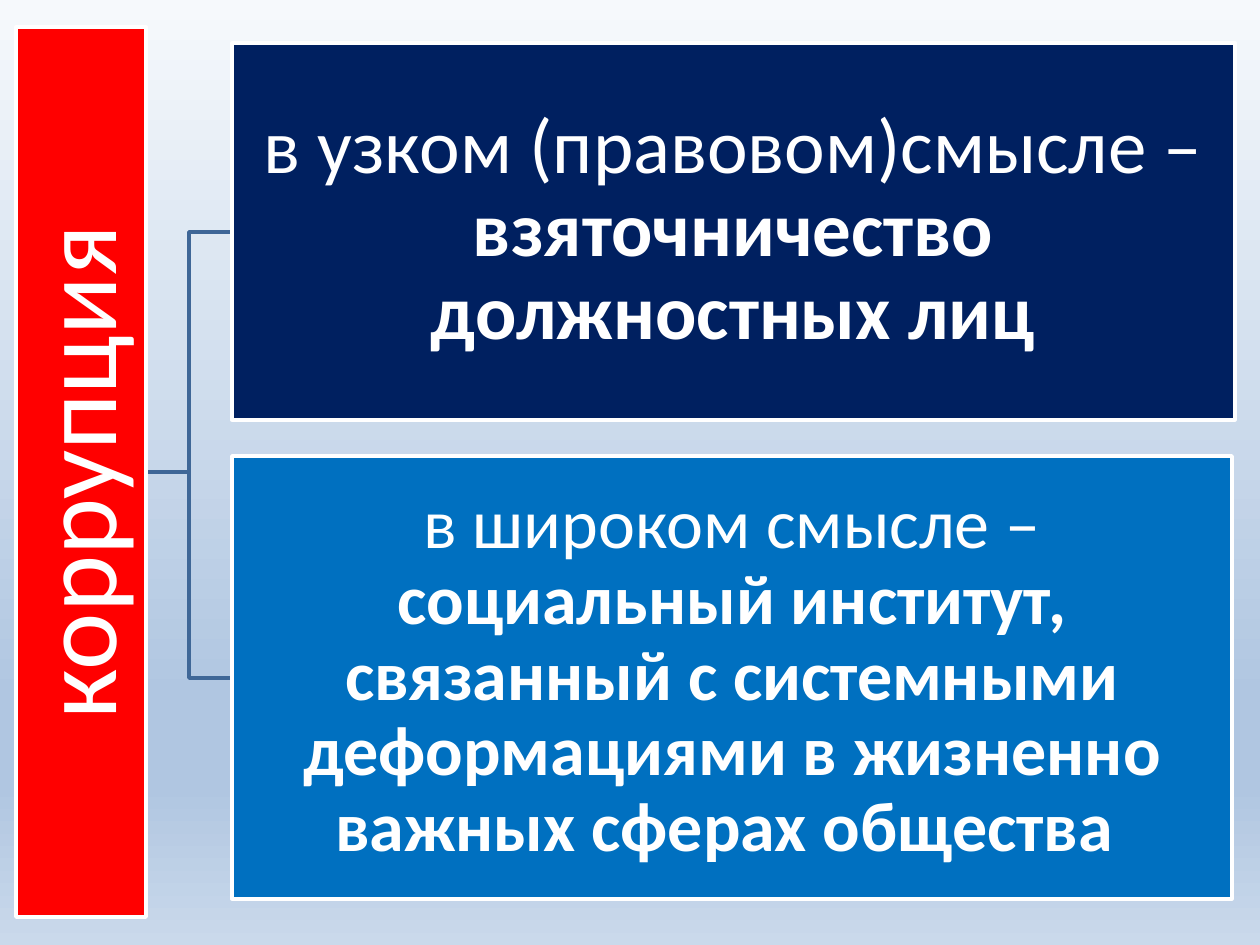
from copy import deepcopy

from pptx import Presentation
from pptx.dml.color import RGBColor
from pptx.enum.shapes import MSO_SHAPE
from pptx.enum.text import MSO_ANCHOR, PP_ALIGN
from pptx.oxml.ns import qn
from pptx.util import Emu, Pt

RECTANGLE = MSO_SHAPE.RECTANGLE
MIDDLE = MSO_ANCHOR.MIDDLE
CENTER = PP_ALIGN.CENTER

PX = 914400 / 126
FONT = "Calibri"
WHITE, RED, NAVY, BLUE, STEEL = "FFFFFF", "FF0000", "002060", "0070C0", "3F6797"
BACKGROUND_STOPS = [(0, "F6F9FC"), (0.74, "B0C6E1"), (0.83, "B0C6E1"), (1, "CAD9EB")]


def px(length):
    return Emu(round(length * PX))


def rgb(hex_code):
    return RGBColor.from_string(hex_code)


def apply(target, formats):
    for name, value in formats.items():
        setattr(target, name, value)


def set_outline(shape, color):
    shape.shadow.inherit = False
    shape.line.color.rgb = rgb(color)
    shape.line.width = Pt(2)


def paint_background(slide):
    fill = slide.background.fill
    fill.gradient()
    fill.gradient_angle = 270
    # The default gradient has two stops; extend it to the needed number
    stop_list = next(slide.element.iter(qn("a:gsLst")))
    while len(stop_list) < len(BACKGROUND_STOPS):
        stop_list.append(deepcopy(stop_list[0]))
    for stop, (position, color) in zip(fill.gradient_stops, BACKGROUND_STOPS):
        stop.position = position
        stop.color.rgb = rgb(color)


def add_branch(slide, start, end):
    (x1, y1), (x2, y2) = start, end
    bend = (x1 + x2) / 2
    builder = slide.shapes.build_freeform(x1, y1, scale=PX)
    builder.add_line_segments([(bend, y1), (bend, y2), (x2, y2)], close=False)
    branch = builder.convert_to_shape()
    branch.fill.background()
    set_outline(branch, STEEL)


def add_box(slide, bounds, color, size, inset, plain, bold="", rotation=0):
    box = slide.shapes.add_shape(RECTANGLE, *map(px, bounds))
    box.rotation = rotation
    box.fill.solid()
    box.fill.fore_color.rgb = rgb(color)
    set_outline(box, WHITE)

    frame = box.text_frame
    margins = {f"margin_{side}": px(inset) for side in ("left", "top", "right", "bottom")}
    apply(frame, {"word_wrap": True, "vertical_anchor": MIDDLE, **margins})
    paragraph = frame.paragraphs[0]
    apply(paragraph, {"alignment": CENTER, "line_spacing": 0.9})
    for text, is_bold in ((plain, False), (bold, True)):
        if text:
            run = paragraph.add_run()
            run.text = text
            apply(run.font, {"name": FONT, "size": Pt(size), "bold": is_bold})
            run.font.color.rgb = rgb(WHITE)


def main():
    deck = Presentation()
    deck.slide_width, deck.slide_height = px(1260), px(945)
    slide = deck.slides.add_slide(deck.slide_layouts[6])
    paint_background(slide)

    # Branches from the term to its two meanings
    narrow_bounds = (232, 43, 1003, 377)
    broad_bounds = (232, 456, 1000, 443)
    for left, top, _, height in (broad_bounds, narrow_bounds):
        add_branch(slide, (146, 472), (left, top + height / 2))

    # Term, turned to read upwards
    add_box(slide, (-364, 407, 890, 130), RED, 62, 5, "коррупция", rotation=270)

    # Meanings
    add_box(slide, narrow_bounds, NAVY, 44, 4,
            "в узком (правовом)смысле – ", "взяточничество должностных лиц")
    add_box(slide, broad_bounds, BLUE, 40, 4, "в широком смысле – ",
            "социальный институт, связанный с системными деформациями "
            "в жизненно важных сферах общества ")

    deck.save("out.pptx")


if __name__ == "__main__":
    main()
